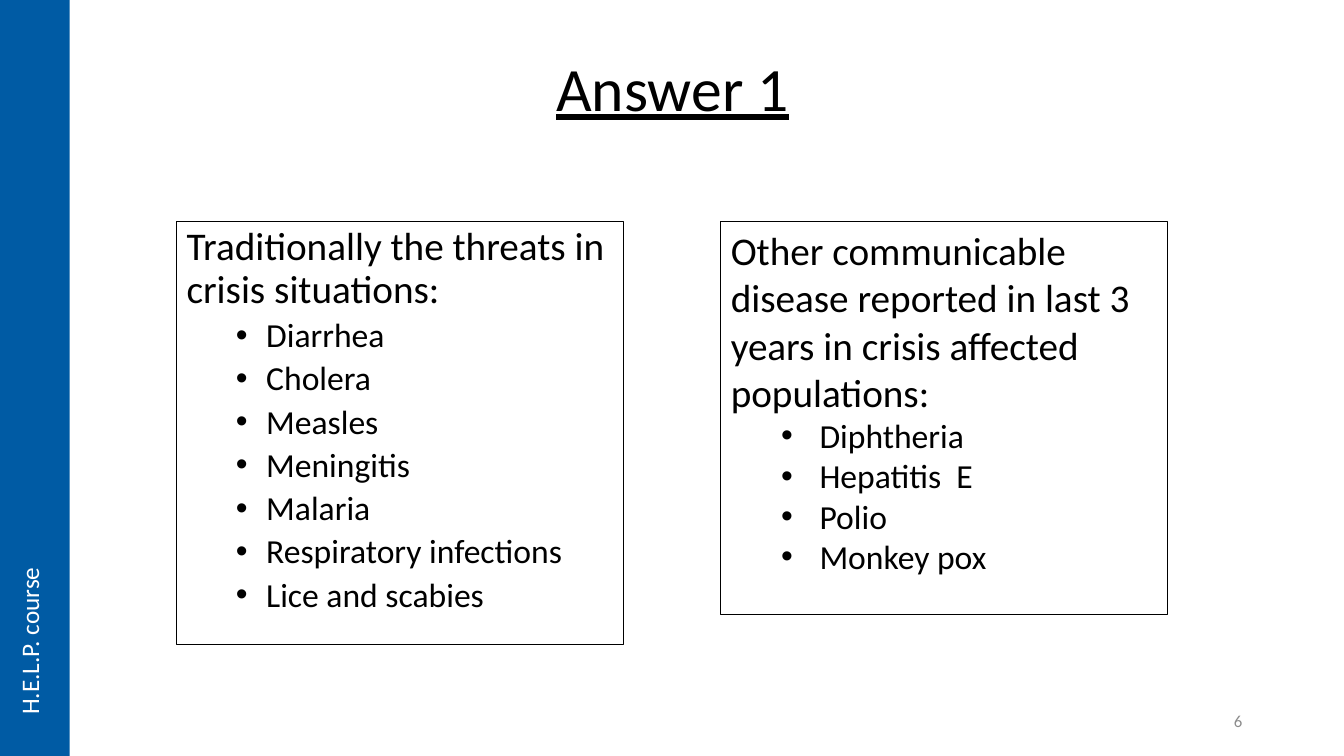
from lxml.etree import SubElement
from pptx import Presentation
from pptx.dml.color import RGBColor
from pptx.enum.shapes import MSO_SHAPE
from pptx.enum.text import MSO_ANCHOR, MSO_AUTO_SIZE, PP_ALIGN
from pptx.oxml.ns import qn
from pptx.util import Inches, Pt

COLORS = {"black": "000000", "white": "FFFFFF", "blue": "005BA4", "grey": "8C8C8C"}
FONT = "Calibri"


def color(name):
    return RGBColor.from_string(COLORS[name])


def write(frame, text, size=24, ink="black", align=PP_ALIGN.LEFT, under=None,
          first=False, level=0, left=0, hang=0, bullet=None, space=1, before=0):
    """Add one formatted paragraph to a text frame."""
    para = frame.paragraphs[0] if first else frame.add_paragraph()
    para.level, para.alignment = level, align
    para.line_spacing, para.space_before = space, Pt(before)
    props = para._p.get_or_add_pPr()
    props.set("marL", str(Inches(left)))
    props.set("indent", str(Inches(-hang)))
    if bullet:
        SubElement(props, qn("a:buFont")).set("typeface", "Arial")
        SubElement(props, qn("a:buChar")).set("char", bullet)
    else:
        SubElement(props, qn("a:buNone"))
    run = para.add_run()
    run.text = text
    font = run.font
    font.name, font.size, font.underline = FONT, Pt(size), under
    font.color.rgb = color(ink)


class Page:
    def __init__(self, deck):
        self.slide = deck.slides.add_slide(deck.slide_layouts[1])
        self.shapes = self.slide.shapes

    def place(self, shape, box):
        shape.left, shape.top, shape.width, shape.height = map(Inches, box)

    def setup(self, frame, anchor=MSO_ANCHOR.TOP, wrap=True):
        frame.auto_size = MSO_AUTO_SIZE.NONE
        frame.vertical_anchor, frame.word_wrap = anchor, wrap
        return frame

    def title(self, text, box):
        shape = self.shapes.title
        self.place(shape, box)
        write(self.setup(shape.text_frame, MSO_ANCHOR.MIDDLE), text, size=44,
              align=PP_ALIGN.CENTER, under=True, first=True, space=0.9)

    def panel(self, shape, box, head, items, left, hang, space=1, before=0):
        self.place(shape, box)
        shape.line.color.rgb = color("black")
        shape.line.width = Pt(0.75)
        frame = self.setup(shape.text_frame)
        write(frame, head, size=28, first=True, space=space)
        for item in items:
            write(frame, item, level=1, left=left, hang=hang, bullet="•",
                  space=space, before=before)

    def bar(self, box, fill):
        shape = self.shapes.add_shape(MSO_SHAPE.RECTANGLE, *map(Inches, box))
        shape.shadow.inherit = False
        shape.fill.solid()
        shape.fill.fore_color.rgb = color(fill)
        shape.line.fill.background()

    def label(self, text, box, anchor=MSO_ANCHOR.TOP, wrap=True, turn=None, **style):
        shape = self.shapes.add_textbox(*map(Inches, box))
        frame = self.setup(shape.text_frame, anchor, wrap)
        if turn:
            shape.element.xpath(".//a:bodyPr")[0].set("vert", turn)
        write(frame, text, first=True, **style)


def main():
    deck = Presentation()
    deck.slide_width, deck.slide_height = Inches(13.33), Inches(7.5)
    page = Page(deck)

    # Heading
    page.title("Answer 1", (0.92, 0.18, 11.5, 1.45))

    # Two disease lists
    page.panel(page.slide.placeholders[1], (1.75, 2.2, 4.43, 4.19),
               "Traditionally the threats in crisis situations:",
               ["Diarrhea", "Cholera", "Measles", "Meningitis", "Malaria",
                "Respiratory infections", "Lice and scabies"],
               left=0.79, hang=0.3, space=0.9, before=5)
    page.panel(page.shapes.add_textbox(0, 0, 0, 0), (7.15, 2.2, 4.43, 3.9),
               "Other communicable disease reported in last 3 years "
               "in crisis affected populations:",
               ["Diphtheria", "Hepatitis  E", "Polio", "Monkey pox"],
               left=0.88, hang=0.38)

    # Side band with course name
    page.bar((0, 0, 0.69, 7.5), "blue")
    page.label("H.E.L.P. course", (0.09, 5.61, 0.5, 1.58), wrap=False,
               turn="vert270", size=18, ink="white")

    # Page number
    page.label("6", (9.42, 6.95, 3, 0.4), anchor=MSO_ANCHOR.MIDDLE,
               size=12, ink="grey", align=PP_ALIGN.RIGHT)

    deck.save("out.pptx")


if __name__ == "__main__":
    main()
